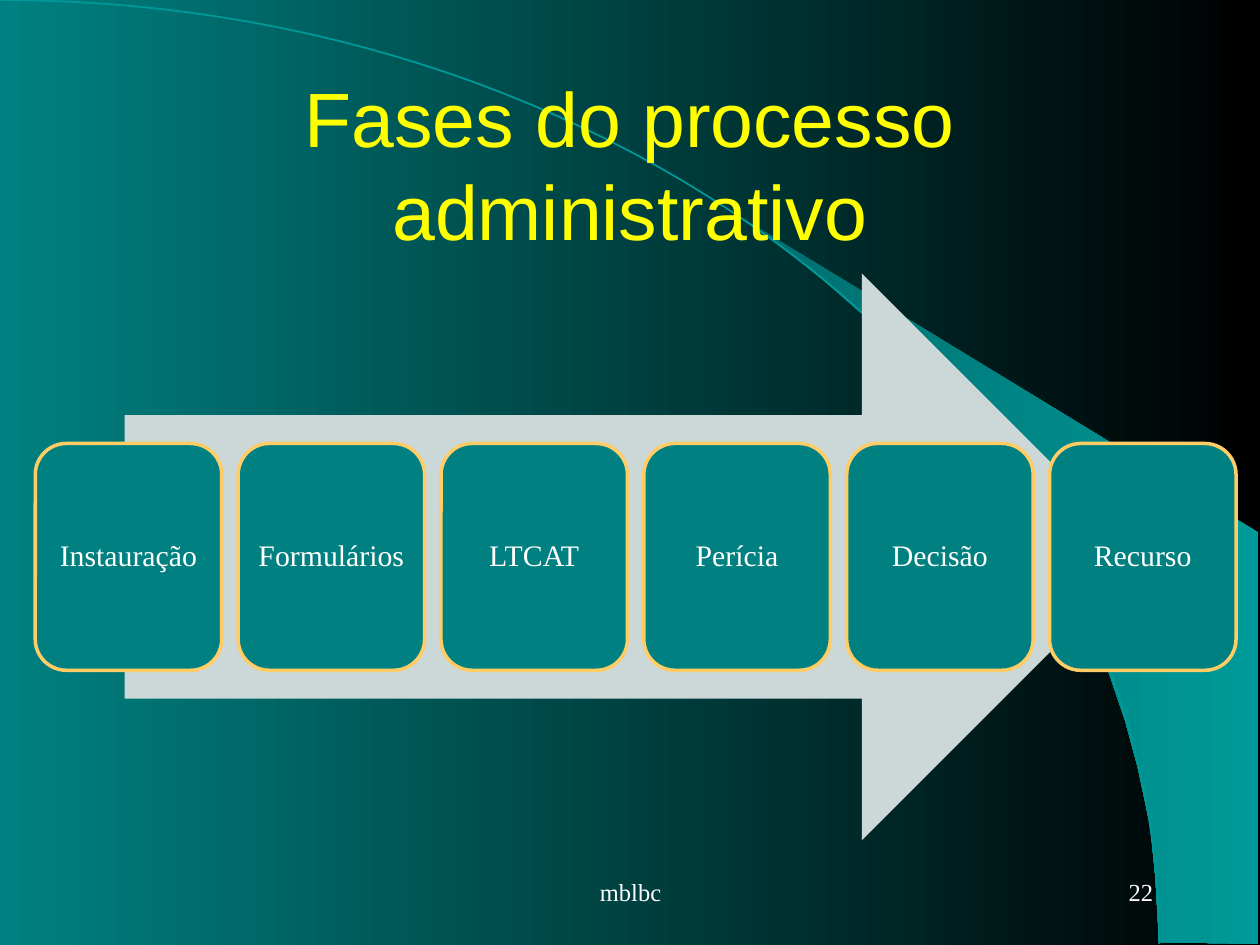
from pptx import Presentation
from pptx.dml.color import RGBColor
from pptx.enum.shapes import MSO_SHAPE
from pptx.enum.text import MSO_ANCHOR, PP_ALIGN
from pptx.util import Inches, Pt

ARROW, ROUND = MSO_SHAPE.RIGHT_ARROW, MSO_SHAPE.ROUNDED_RECTANGLE
MIDDLE = MSO_ANCHOR.MIDDLE
CENTER, RIGHT = PP_ALIGN.CENTER, PP_ALIGN.RIGHT

# Content
TITLE = "Fases do processo administrativo"
STEPS = ["Instauração", "Formulários", "LTCAT", "Perícia", "Decisão", "Recurso"]
FOOTER, NUMBER = "mblbc", "22"

THEME = {
    "back": ("008080", "000000"), "wedge": ("006D6D", "009999"),
    "arc": "009999", "arrow": "CCD8D8", "card": "008080", "edge": "FFCC66",
    "head": {"name": "Arial", "size": Pt(44), "color": "FFFF00"},
    "label": {"name": "Times New Roman", "size": Pt(17), "color": "FFFFFF"},
    "small": {"name": "Times New Roman", "size": Pt(14), "color": "FFFFFF"},
}

# Geometry in inches
WEDGE = [(9.2, 7.48), (9.99, 7.49), (9.99, 4.23), (5.89, 1.73), (6.24, 1.99),
         (6.53, 2.22), (6.85, 2.5), (7.16, 2.8), (7.62, 3.3), (8.03, 3.84),
         (8.32, 4.31), (8.58, 4.79), (8.78, 5.28), (8.93, 5.72), (9.03, 6.09),
         (9.13, 6.56), (9.17, 6.96)]
CURVE = [(0, 0), (5.08, 0), (9.2, 3.35), (9.2, 7.49)]
CARD_X, CARD_Y, CARD_W, CARD_H, PITCH = 0.28, 3.52, 1.48, 1.8, 1.61


def blend(fill, colors):
    fill.gradient()
    fill.gradient_angle = 0
    for stop, color, pos in zip(fill.gradient_stops, colors, (0, 1)):
        stop.color.rgb = RGBColor.from_string(color)
        stop.position = pos


def bezier(ends, count=60):
    points = []
    for i in range(count + 1):
        t = i / count
        parts = ((1 - t) ** 3, 3 * t * (1 - t) ** 2, 3 * t * t * (1 - t), t ** 3)
        points.append(tuple(sum(w * p[a] for w, p in zip(parts, ends))
                            for a in (0, 1)))
    return points


def outline(slide, points, close):
    first, *rest = [(Inches(x), Inches(y)) for x, y in points]
    pen = slide.shapes.build_freeform(*first, scale=1.0)
    pen.add_line_segments(rest, close=close)
    shape = pen.convert_to_shape()
    shape.shadow.inherit = False
    return shape


def block(slide, kind, box, color):
    shape = slide.shapes.add_shape(kind, *map(Inches, box))
    shape.shadow.inherit = False
    shape.fill.solid()
    shape.fill.fore_color.rgb = RGBColor.from_string(color)
    shape.line.fill.background()
    return shape


def stroke(shape, color, width):
    shape.line.color.rgb = RGBColor.from_string(color)
    shape.line.width = Pt(width)


def write(shape, text, style, align=CENTER, inset=(0.1, 0.05), spacing=None):
    frame = shape.text_frame
    across, down = map(Inches, inset)
    layout = {"word_wrap": True, "vertical_anchor": MIDDLE,
              "margin_left": across, "margin_right": across,
              "margin_top": down, "margin_bottom": down}
    for key, value in layout.items():
        setattr(frame, key, value)
    para = frame.paragraphs[0]
    para.alignment = align
    para.line_spacing = spacing
    run = para.add_run()
    run.text = text
    for key in ("name", "size"):
        setattr(run.font, key, style[key])
    run.font.color.rgb = RGBColor.from_string(style["color"])


def main():
    deck = Presentation()
    deck.slide_width, deck.slide_height = Inches(10), Inches(7.5)
    slide = deck.slides.add_slide(deck.slide_layouts[6])

    # Background with wedge and arc
    blend(slide.background.fill, THEME["back"])
    wedge = outline(slide, WEDGE, True)
    blend(wedge.fill, THEME["wedge"])
    wedge.line.fill.background()
    arc = outline(slide, bezier(CURVE), False)
    arc.fill.background()
    stroke(arc, THEME["arc"], 1)

    # Arrow and step cards
    block(slide, ARROW, (0.99, 2.17, 8.1, 4.5), THEME["arrow"])
    for i, step in enumerate(STEPS):
        box = (CARD_X + i * PITCH, CARD_Y, CARD_W, CARD_H)
        card = block(slide, ROUND, box, THEME["card"])
        stroke(card, THEME["edge"], 2)
        write(card, step, THEME["label"], inset=(0.07, 0.07), spacing=0.9)

    # Title, footer and slide number
    texts = [
        (TITLE, (0.75, 0.67, 8.5, 1.25), "head", CENTER),
        (FOOTER, (3.42, 6.83, 3.17, 0.5), "small", CENTER),
        (NUMBER, (7.17, 6.83, 2.08, 0.5), "small", RIGHT),
    ]
    for text, box, style, align in texts:
        area = slide.shapes.add_textbox(*map(Inches, box))
        write(area, text, THEME[style], align)

    deck.save("out.pptx")


if __name__ == "__main__":
    main()
